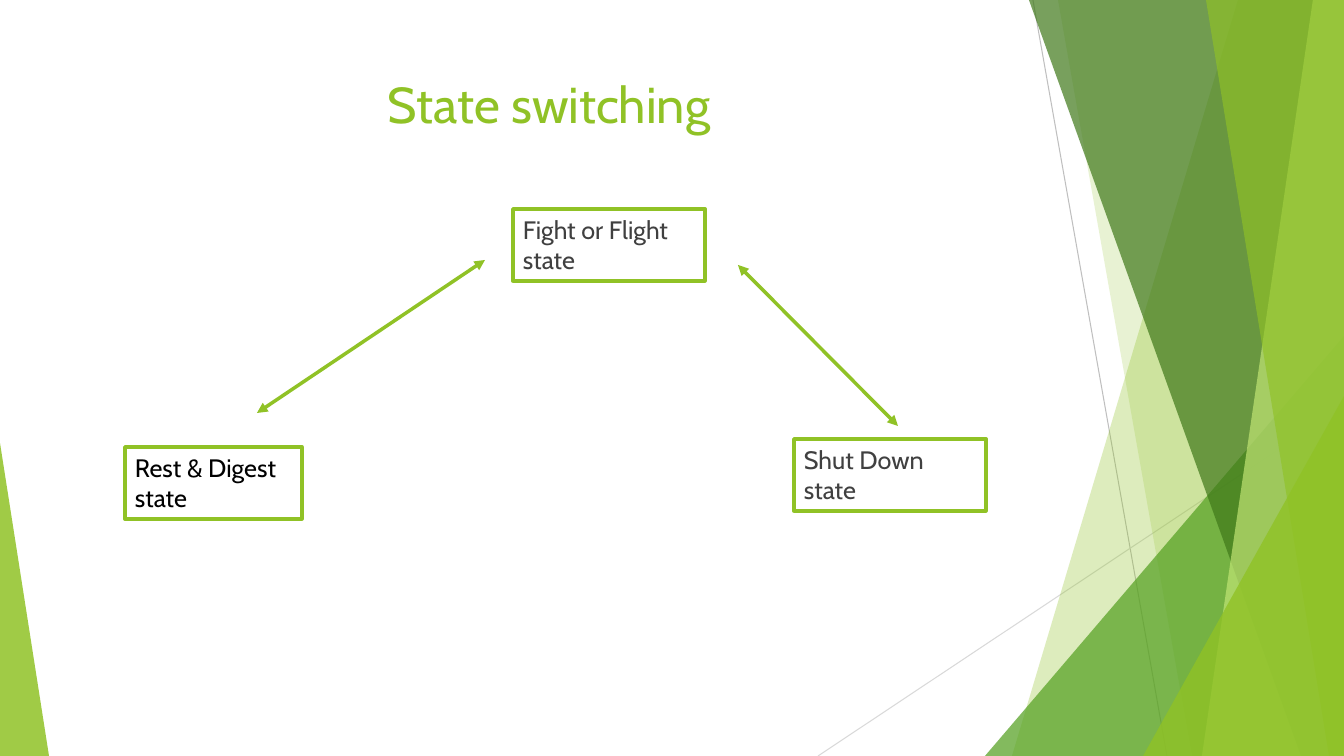
"""Build the state switching slide with its faceted green border."""
import lxml.etree
import pptx
import pptx.dml.color
import pptx.enum.shapes
import pptx.enum.text
import pptx.oxml.ns
import pptx.util

W, H = 1344, 756
SCALE = 12192000 / W
THEME = {
    "font": "Cabin", "title_pt": 36, "body_pt": 18, "line_pt": 2.5, "hair_pt": 0.75,
    "green": "90C226", "leaf": "54A021", "forest": "3F7819", "lime": "C0E474",
    "black": "000000", "grey": "404040", "hair": "BFBFBF", "pale": "D9D9D9",
}

TITLE = ("State switching", (75, 68, 948, 145), 313)
STATES = [
    ("Rest & Digest state", (125, 447, 177, 72), "black"),
    ("Fight or Flight state", (513, 209, 192, 72), "grey"),
    ("Shut Down state", (794, 439, 192, 72), "grey"),
]
SWITCHES = [(257, 413, 485, 260), (898, 426, 738, 265)]
HAIRLINES = [((1033, 0, 1167, H), "hair"), ((W, 406, 818, H), "pale")]
FACETS = [
    ("band", (1238, 1012), "green", 30),
    ("band", (1058, 1192), "green", 20),
    ("right", (985, 336, 359, 420), "leaf", 72),
    ("band", (1029, 1301), "forest", 70),
    ("band", (1313, 1202), "lime", 70),
    ("band", (1206, 1329), "green", 65),
    ("right", (1143, 396, 201, 360), "green", 80),
    ("left", (0, 443, 49, 313), "green", 85),
]


def emu(*px):
    return [pptx.util.Emu(round(v * SCALE)) for v in px]


def color(name):
    return pptx.dml.color.RGBColor.from_string(THEME[name])


def add_child(parent, tag, **attrs):
    lxml.etree.SubElement(parent, pptx.oxml.ns.qn(tag), attrs)


def add_line(s, ends, line_color, width, arrows=False):
    sp = s.shapes.add_connector(pptx.enum.shapes.MSO_CONNECTOR.STRAIGHT, *emu(*ends))
    sp.line.color.rgb = color(line_color)
    sp.line.width = pptx.util.Pt(width)
    if arrows:
        ln = sp._element.spPr.find(pptx.oxml.ns.qn("a:ln"))
        for tag in ("a:headEnd", "a:tailEnd"):
            add_child(ln, tag, type="triangle")
    add_child(sp._element.spPr, "a:effectLst")


def add_facet(s, kind, geometry, fill, alpha):
    if kind == "band":
        top, bottom = geometry
        fb = s.shapes.build_freeform(top, 0, scale=SCALE)
        fb.add_line_segments([(W, 0), (W, H), (bottom, H)], close=True)
        sp = fb.convert_to_shape()
    else:
        sp = s.shapes.add_shape(pptx.enum.shapes.MSO_SHAPE.ISOSCELES_TRIANGLE, *emu(*geometry))
        sp.adjustments[0] = 1 if kind == "right" else 0
    sp.shadow.inherit = False
    sp.line.fill.background()
    sp.fill.solid()
    sp.fill.fore_color.rgb = color(fill)
    clr = sp._element.spPr.find(".//" + pptx.oxml.ns.qn("a:srgbClr"))
    add_child(clr, "a:alpha", val=str(alpha * 1000))


def write(tf, text, size, font_color):
    tf.text = text
    tf.word_wrap = True
    p = tf.paragraphs[0]
    p.alignment = pptx.enum.text.PP_ALIGN.LEFT
    font = p.runs[0].font
    font.name = THEME["font"]
    font.size = pptx.util.Pt(size)
    font.color.rgb = color(font_color)


def add_state(s, text, box, font_color):
    sp = s.shapes.add_shape(pptx.enum.shapes.MSO_SHAPE.RECTANGLE, *emu(*box))
    sp.shadow.inherit = False
    sp.fill.background()
    sp.line.color.rgb = color("green")
    sp.line.width = pptx.util.Pt(THEME["line_pt"])
    write(sp.text_frame, text, THEME["body_pt"], font_color)
    sp.text_frame.vertical_anchor = pptx.enum.text.MSO_ANCHOR.TOP


def main():
    prs = pptx.Presentation()
    prs.slide_width, prs.slide_height = emu(W, H)
    s = prs.slides.add_slide(prs.slide_layouts[6])
    for ends, line_color in HAIRLINES:
        add_line(s, ends, line_color, THEME["hair_pt"])
    for facet in FACETS:
        add_facet(s, *facet)
    text, box, inset = TITLE
    tf = s.shapes.add_textbox(*emu(*box)).text_frame
    write(tf, text, THEME["title_pt"], "green")
    tf.margin_left = emu(inset)[0]
    for state in STATES:
        add_state(s, *state)
    for ends in SWITCHES:
        add_line(s, ends, "green", THEME["line_pt"], arrows=True)
    prs.save("out.pptx")


if __name__ == "__main__":
    main()
